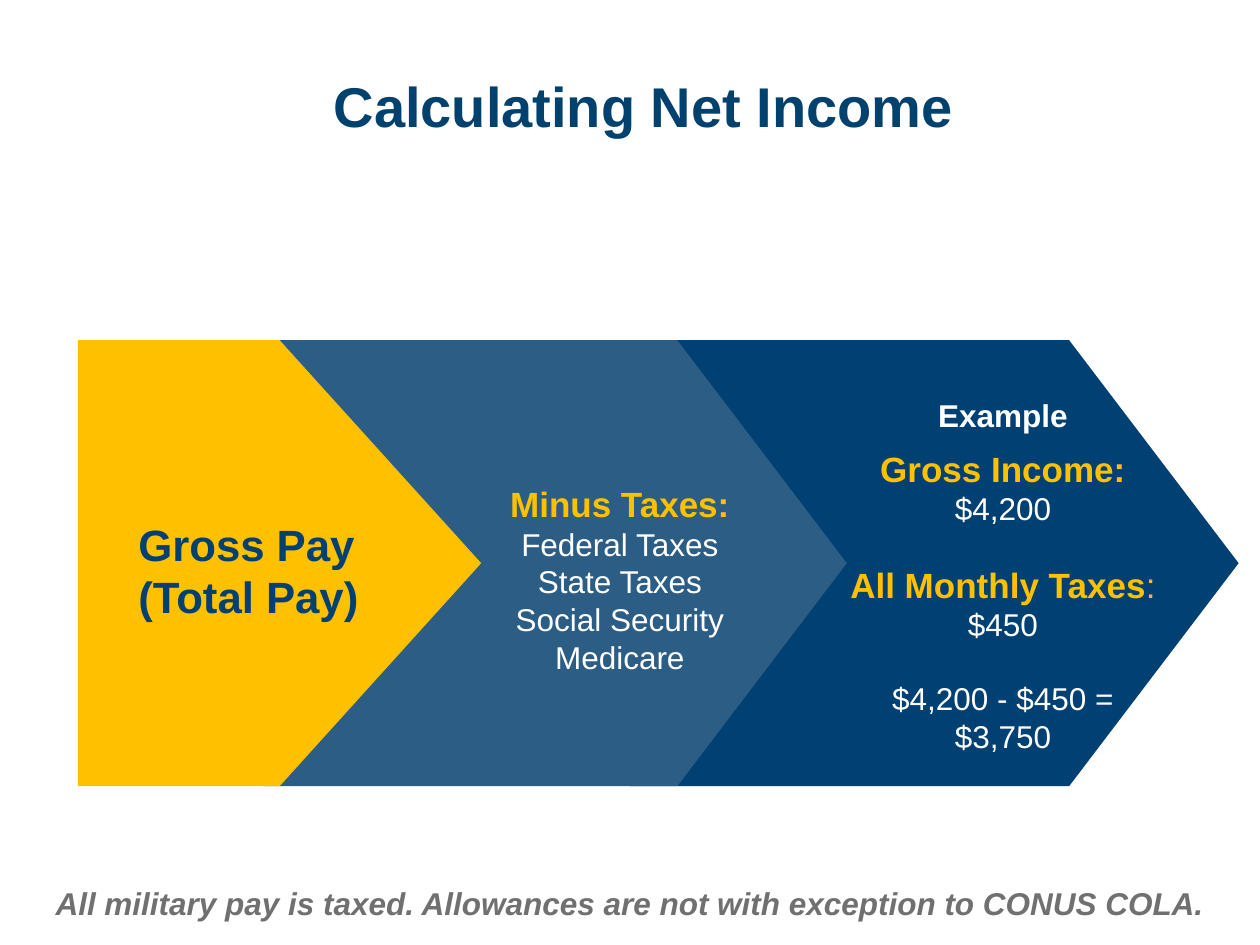
import collections

import pptx
import pptx.dml.color
import pptx.enum.shapes
import pptx.enum.text
import pptx.util

Pt = pptx.util.Pt
Align = pptx.enum.text.PP_ALIGN
Anchor = pptx.enum.text.MSO_ANCHOR
Fit = pptx.enum.text.MSO_AUTO_SIZE

COLORS = {
    "navy": "004072",
    "title": "00416D",
    "steel": "2C5D85",
    "gold": "FFC000",
    "white": "FFFFFF",
    "gray": "707070",
}

Style = collections.namedtuple("Style", "size color bold italic", defaults=(False, False))
Line = collections.namedtuple("Line", "runs gap", defaults=(0,))

TITLE = Style(32, "title", True)
GROSS = Style(25, "navy", True)
HEAD = Style(20, "gold", True)
COLON = Style(20, "gold")
BODY = Style(18, "white")
LABEL = Style(18, "white", True)
NOTE = Style(18, "gray", True, True)

TOP, HEIGHT = 194.4, 254.9
BLANK = 20.7  # height of one empty body line


class Deck:
    """Holds the style and the current slide; lengths are in points."""

    face = "Arial"

    def __init__(self, width, height):
        self.file = pptx.Presentation()
        self.file.slide_width, self.file.slide_height = Pt(width), Pt(height)
        self.slide = self.file.slides.add_slide(self.file.slide_layouts[6])

    def color(self, name):
        return pptx.dml.color.RGBColor.from_string(COLORS[name])

    def arrow(self, left, width, color, point):
        kind = pptx.enum.shapes.MSO_SHAPE.PENTAGON
        shape = self.slide.shapes.add_shape(kind, Pt(left), Pt(TOP), Pt(width), Pt(HEIGHT))
        shape.adjustments[0] = point
        shape.shadow.inherit = False
        shape.fill.solid()
        shape.fill.fore_color.rgb = self.color(color)
        shape.line.fill.background()

    def font(self, font, style):
        font.name = self.face
        font.size = Pt(style.size)
        font.bold, font.italic = style.bold, style.italic
        font.color.rgb = self.color(style.color)

    def text(self, box, lines, align=Align.CENTER, wrap=True, anchor=Anchor.TOP, fit=Fit.SHAPE_TO_FIT_TEXT):
        """Adds a text box; each line holds (text, style) runs and a gap above."""
        frame = self.slide.shapes.add_textbox(*map(Pt, box)).text_frame
        frame.word_wrap, frame.auto_size = wrap, fit
        frame.vertical_anchor = anchor
        for index, line in enumerate(lines):
            para = frame.paragraphs[0] if index == 0 else frame.add_paragraph()
            para.alignment = align
            if line.gap:
                para.space_before = Pt(line.gap)
            same = len({style for _, style in line.runs}) == 1
            if same:
                self.font(para.font, line.runs[0][1])
            for words, style in line.runs:
                run = para.add_run()
                run.text = words
                if not same:
                    self.font(run.font, style)

    def save(self):
        self.file.save("out.pptx")


def row(words, style, gap=0):
    return Line([(words, style)], gap)


def main():
    deck = Deck(720, 540)

    deck.arrow(360, 347.8, "navy", 0.38)
    deck.arrow(150.5, 333.4, "steel", 0.38)
    deck.arrow(44.6, 230.4, "gold", 0.5)

    deck.text((183.6, 21.6, 403.2, 77), [row("Calculating Net Income", TITLE)],
              align=Align.LEFT, anchor=Anchor.MIDDLE, fit=Fit.NONE)

    deck.text((72, 292.3, 141.8, 67.7),
              [row(words, GROSS) for words in ("Gross Pay", "(Total Pay)")],
              align=Align.LEFT, wrap=False)

    taxes = ("Federal Taxes", "State Taxes", "Social Security", "Medicare")
    deck.text((283.7, 272.2, 141.1, 118.8),
              [row("Minus Taxes:", HEAD)] + [row(tax, BODY) for tax in taxes],
              wrap=False)

    deck.text((470.9, 252, 204.5, 186.5), [
        row("Gross Income:", HEAD),
        row("$4,200", BODY),
        Line([("All Monthly Taxes", HEAD), (":", COLON), (" $450", BODY)], BLANK),
        row("$4,200 - $450 =", BODY, BLANK),
        row("$3,750", BODY),
    ])
    deck.text((528.5, 222.5, 89.3, 28.8), [row("Example", LABEL)], wrap=False)

    note = "All military pay is taxed. Allowances are not with exception to CONUS COLA."
    deck.text((0, 501.8, 720, 28.8), [row(note, NOTE)])

    deck.save()


if __name__ == "__main__":
    main()
